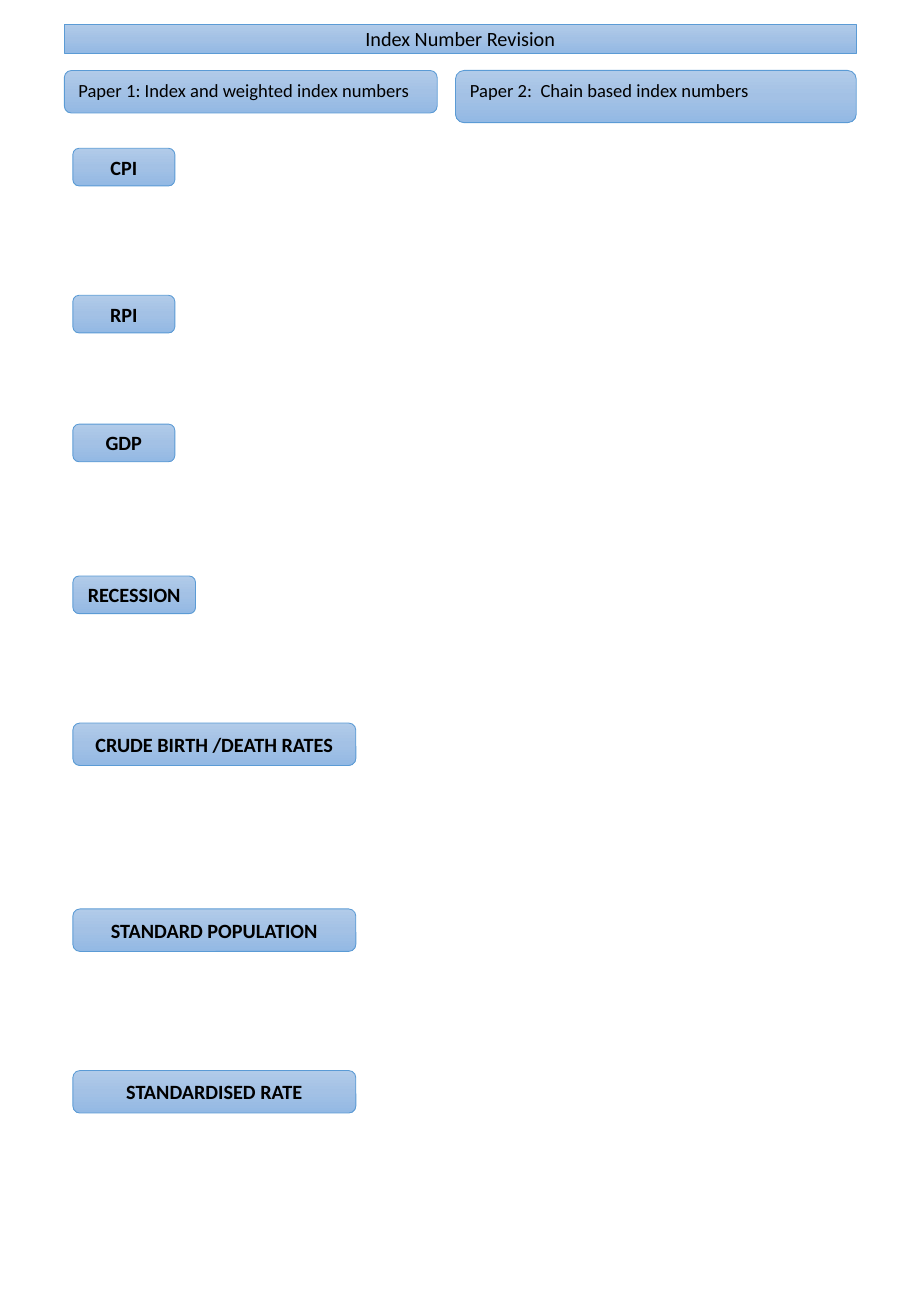
from copy import deepcopy

from lxml import etree
from pptx import Presentation
from pptx.dml.color import RGBColor
from pptx.enum.shapes import MSO_SHAPE
from pptx.enum.text import MSO_ANCHOR, MSO_AUTO_SIZE, PP_ALIGN
from pptx.oxml.ns import qn
from pptx.util import Pt

ROUNDED = MSO_SHAPE.ROUNDED_RECTANGLE
TOP, MIDDLE = MSO_ANCHOR.TOP, MSO_ANCHOR.MIDDLE
LEFT, CENTER = PP_ALIGN.LEFT, PP_ALIGN.CENTER
NO_AUTOFIT = MSO_AUTO_SIZE.NONE

BLACK = RGBColor(0x00, 0x00, 0x00)
BORDER = RGBColor(0x5B, 0x9B, 0xD5)
GRADIENT = [
    (0, RGBColor(0xB1, 0xCB, 0xE9)),
    (0.5, RGBColor(0xA3, 0xC1, 0xE5)),
    (1, RGBColor(0x93, 0xB9, 0xE4)),
]

PX = 9144
SLIDE_WIDTH, SLIDE_HEIGHT = 750, 1083

TITLE = ("Index Number Revision", (53, 20, 652, 24))
PAPERS = [
    ("Paper 1: Index and weighted index numbers", (53, 58, 307, 35)),
    ("Paper 2:  Chain based index numbers", (375, 58, 330, 43)),
]
TERM_LEFT = 60
SMALL, MEDIUM, LARGE = (84, 31), (101, 31), (233, 35)
TERMS = [
    ("CPI", 122, SMALL),
    ("RPI", 243, SMALL),
    ("GDP", 349, SMALL),
    ("RECESSION", 474, MEDIUM),
    ("CRUDE BIRTH /DEATH RATES", 595, LARGE),
    ("STANDARD POPULATION", 748, LARGE),
    ("STANDARDISED RATE", 881, LARGE),
]

TITLE_STYLE = {"size": Pt(12), "bold": False}
PAPER_STYLE = {"size": Pt(11), "bold": False}
TERM_STYLE = {"size": Pt(12), "bold": True}


def set_values(target, values):
    for name, value in values.items():
        setattr(target, name, value)


def place(shape, box):
    sides = ("left", "top", "width", "height")
    set_values(shape, {side: length * PX for side, length in zip(sides, box)})


def paint(shape):
    shape.fill.gradient()
    shape.fill.gradient_angle = 270
    stop_list = shape.fill.gradient_stops
    first_stop = shape.element.spPr.find(".//" + qn("a:gs"))
    for _ in range(len(GRADIENT) - len(stop_list)):
        first_stop.addnext(deepcopy(first_stop))
    for stop, (position, color) in zip(shape.fill.gradient_stops, GRADIENT):
        stop.position = position
        stop.color.rgb = color
    shape.line.color.rgb = BORDER
    shape.line.width = Pt(0.5)


def write(shape, text, style, alignment, anchor):
    frame = shape.text_frame
    frame.text = text
    set_values(frame, {"word_wrap": True, "auto_size": NO_AUTOFIT, "vertical_anchor": anchor})
    paragraph = frame.paragraphs[0]
    paragraph.alignment = alignment
    font = paragraph.runs[0].font
    set_values(font, {"name": "Calibri", **style})
    font.color.rgb = BLACK


def add_box(slide, text, box, style, alignment, anchor):
    shape = slide.shapes.add_shape(ROUNDED, 0, 0, PX, PX)
    shape.shadow.inherit = False
    place(shape, box)
    paint(shape)
    write(shape, text, style, alignment, anchor)


def add_title(slide, text, box):
    title = slide.shapes.title
    place(title, box)
    geometry = etree.SubElement(title.element.spPr, qn("a:prstGeom"), prst="roundRect")
    etree.SubElement(geometry, qn("a:avLst"))
    paint(title)
    write(title, text, TITLE_STYLE, CENTER, MIDDLE)


def main():
    presentation = Presentation()
    presentation.slide_width = SLIDE_WIDTH * PX
    presentation.slide_height = SLIDE_HEIGHT * PX
    slide = presentation.slides.add_slide(presentation.slide_layouts[5])
    add_title(slide, *TITLE)
    for text, box in PAPERS:
        add_box(slide, text, box, PAPER_STYLE, LEFT, TOP)
    for text, top, size in TERMS:
        add_box(slide, text, (TERM_LEFT, top, *size), TERM_STYLE, CENTER, MIDDLE)
    presentation.save("out.pptx")


if __name__ == "__main__":
    main()
